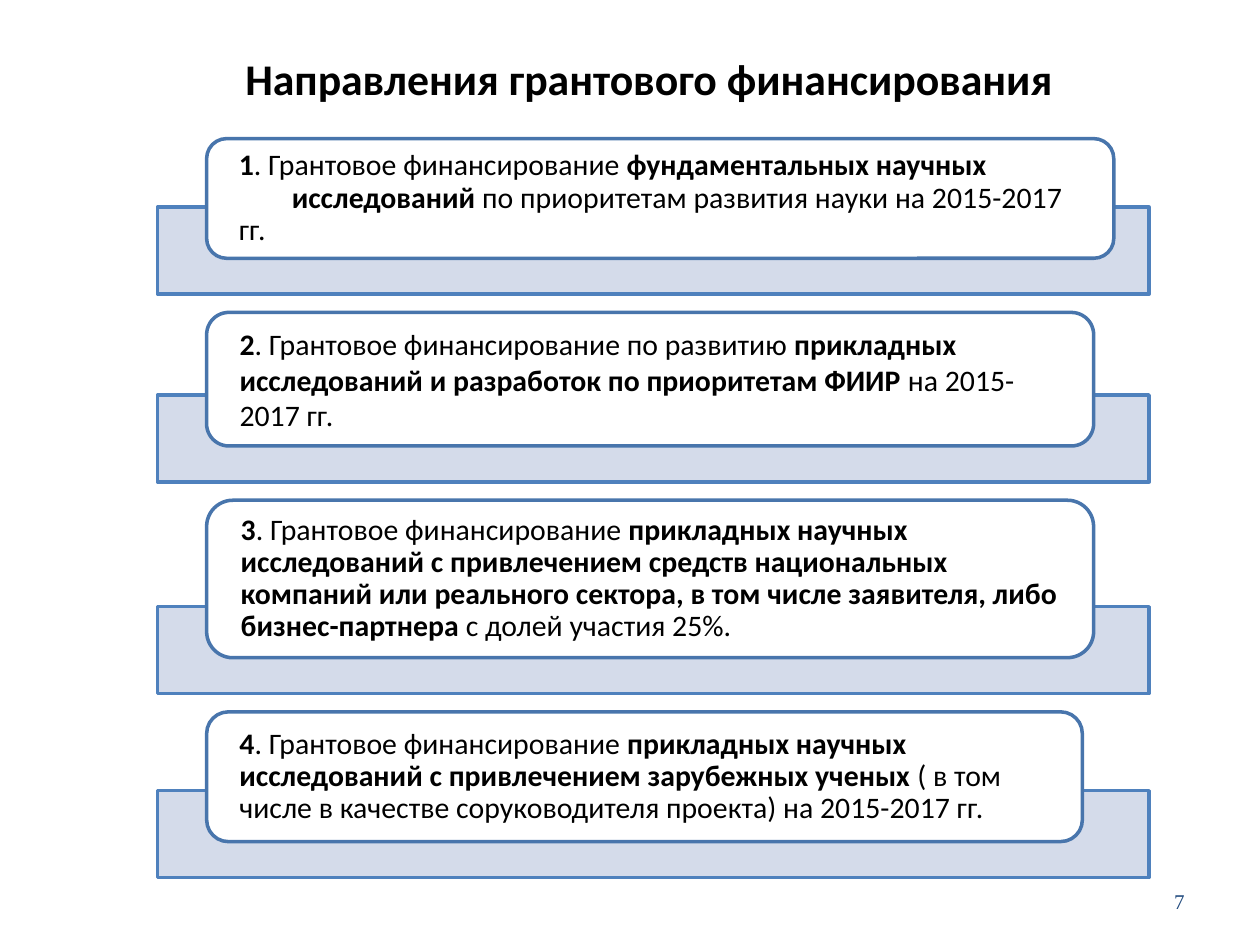
from lxml import etree
from pptx import Presentation
from pptx import util as u
from pptx.dml.color import RGBColor
from pptx.enum import shapes, text
from pptx.oxml.ns import qn

THEME = {
    "bar": RGBColor.from_string("D0D8E8"),
    "bar_line": RGBColor.from_string("4F81BD"),
    "card": RGBColor.from_string("FFFFFF"),
    "card_line": RGBColor.from_string("4875AC"),
    "ink": RGBColor.from_string("000000"),
    "number": RGBColor.from_string("1F497D"),
    "body_font": "Calibri",
    "number_font": "Times New Roman",
    "title_size": u.Pt(25),
    "body_size": u.Pt(17),
    "number_size": u.Pt(12),
    "line_width": u.Pt(2),
}

presentation = Presentation()
presentation.slide_width = u.Inches(10)
presentation.slide_height = u.Inches(7.5)
slide = presentation.slides.add_slide(presentation.slide_layouts[5])

# Square grid: 100 columns by 75 rows
COLUMN = presentation.slide_width / 100
ROW = presentation.slide_height / 75


def add_panel(kind, left, top, width, height, fill, line):
    shape = slide.shapes.add_shape(
        kind, round(left * COLUMN), round(top * ROW),
        round(width * COLUMN), round(height * ROW))
    shape.shadow.inherit = False
    shape.fill.solid()
    shape.fill.fore_color.rgb = fill
    shape.line.color.rgb = line
    shape.line.width = THEME["line_width"]
    return shape


def add_run(paragraph, wording, bold, size="body_size", font="body_font", color="ink"):
    run = paragraph.add_run()
    run.text = wording
    formats = {"bold": bold, "size": THEME[size], "name": THEME[font]}
    for name, value in formats.items():
        setattr(run.font, name, value)
    run.font.color.rgb = THEME[color]


# Title
title = slide.shapes.title
title.left, title.width = round(15.3 * COLUMN), round(72.4 * COLUMN)
title.top, title.height = round(3.6 * ROW), round(5.2 * ROW)
title.text_frame.vertical_anchor = text.MSO_ANCHOR.TOP
title_paragraph = title.text_frame.paragraphs[0]
title_paragraph.alignment = text.PP_ALIGN.CENTER
add_run(title_paragraph, "Направления грантового финансирования", True, "title_size")

# Funding directions: card width, card height, line spacing, alternating plain and bold wording
directions = [
    (72, 9.5, 0.9, [
        ". Грантовое финансирование ",
        "фундаментальных научных\n\tисследований ",
        "по приоритетам развития науки на 2015-2017 гг."]),
    (70.4, 10.6, 1.0, [
        ". Грантовое финансирование по развитию ",
        "прикладных исследований и разработок по приоритетам ФИИР ",
        "на 2015-2017 гг."]),
    (70.4, 12.5, 0.9, [
        ". Грантовое финансирование ",
        "прикладных научных исследований с привлечением средств национальных "
        "компаний или реального сектора, в том числе заявителя, либо бизнес-партнера ",
        "с долей участия 25%."]),
    (69.5, 10.3, 0.9, [
        ". Грантовое финансирование ",
        "прикладных научных исследований с привлечением зарубежных ученых ",
        "( в том числе в качестве соруководителя проекта) на 2015-2017 гг."]),
]
BAR_HEIGHT, BAR_DROP, GAP = 6.9, 2.85, 1.45
card_top = 11

for number, (width, height, spacing, wordings) in enumerate(directions, start=1):
    bar_bottom = card_top + height + BAR_DROP
    bar = add_panel(shapes.MSO_SHAPE.RECTANGLE, 12.5, bar_bottom - BAR_HEIGHT,
                    78.7, BAR_HEIGHT, THEME["bar"], THEME["bar_line"])
    bar_color = bar.fill._xPr.find(qn("a:solidFill"))[0]
    etree.SubElement(bar_color, qn("a:alpha"), val="90000")

    card = add_panel(shapes.MSO_SHAPE.ROUNDED_RECTANGLE, 16.4, card_top,
                     width, height, THEME["card"], THEME["card_line"])
    frame_format = {
        "word_wrap": True,
        "vertical_anchor": text.MSO_ANCHOR.MIDDLE,
        "margin_left": round(2.1 * COLUMN),
        "margin_right": round(2.1 * COLUMN),
        "margin_top": 0,
        "margin_bottom": 0,
    }
    for name, value in frame_format.items():
        setattr(card.text_frame, name, value)
    paragraph = card.text_frame.paragraphs[0]
    paragraph.alignment = text.PP_ALIGN.LEFT
    paragraph.line_spacing = spacing
    for position, wording in enumerate([str(number), *wordings]):
        for line_index, line in enumerate(wording.split("\n")):
            if line_index:
                paragraph.add_line_break()
            if line.startswith("\t"):
                tabs = etree.SubElement(paragraph._p.get_or_add_pPr(), qn("a:tabLst"))
                etree.SubElement(tabs, qn("a:tab"), pos=str(round(4.2 * COLUMN)), algn="l")
            add_run(paragraph, line, position % 2 == 0)
    card_top = bar_bottom + GAP

# Slide number
number_box = slide.shapes.add_textbox(
    round(71.7 * COLUMN), round(69.5 * ROW), round(23.3 * COLUMN), round(4 * ROW))
number_box.text_frame.word_wrap = True
number_box.text_frame.vertical_anchor = text.MSO_ANCHOR.MIDDLE
number_paragraph = number_box.text_frame.paragraphs[0]
number_paragraph.alignment = text.PP_ALIGN.RIGHT
add_run(number_paragraph, "7", False, "number_size", "number_font", "number")

presentation.save("out.pptx")
